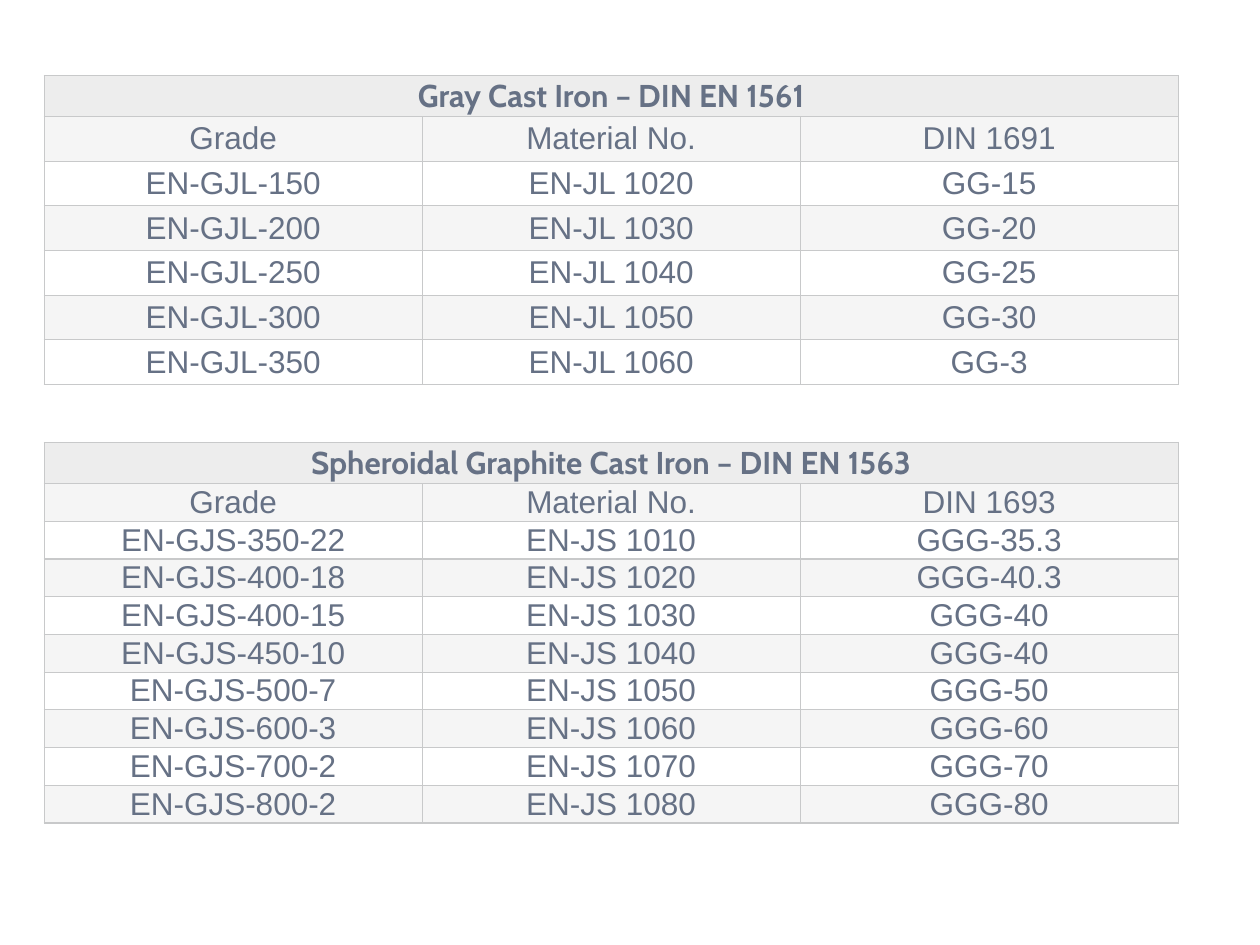
import pptx
import pptx.dml.color
import pptx.enum.text
import pptx.oxml
import pptx.oxml.ns
import pptx.util
from pptx.util import Cm

TEXT_COLOR = "667185"
BORDER_COLOR = "C8C9CA"
TITLE_FILL = "EDEDED"
BAND_FILLS = ("F5F5F5", "FFFFFF")
TITLE_HEIGHT = Cm(0.83)
CELL_MARGIN = Cm(0.02)

GRAY_IRON = [
    ("Grade", "Material No.", "DIN 1691"),
    ("EN-GJL-150", "EN-JL 1020", "GG-15"),
    ("EN-GJL-200", "EN-JL 1030", "GG-20"),
    ("EN-GJL-250", "EN-JL 1040", "GG-25"),
    ("EN-GJL-300", "EN-JL 1050", "GG-30"),
    ("EN-GJL-350", "EN-JL 1060", "GG-3"),
]
SPHEROIDAL_IRON = [
    ("Grade", "Material No.", "DIN 1693"),
    ("EN-GJS-350-22", "EN-JS 1010", "GGG-35.3"),
    ("EN-GJS-400-18", "EN-JS 1020", "GGG-40.3"),
    ("EN-GJS-400-15", "EN-JS 1030", "GGG-40"),
    ("EN-GJS-450-10", "EN-JS 1040", "GGG-40"),
    ("EN-GJS-500-7", "EN-JS 1050", "GGG-50"),
    ("EN-GJS-600-3", "EN-JS 1060", "GGG-60"),
    ("EN-GJS-700-2", "EN-JS 1070", "GGG-70"),
    ("EN-GJS-800-2", "EN-JS 1080", "GGG-80"),
]


def set_fill(target, color):
    target.fill.solid()
    target.fill.fore_color.rgb = pptx.dml.color.RGBColor.from_string(color)


def write_text(cell, text, font="Arial", size=18, bold=False, color=TEXT_COLOR):
    cell.vertical_anchor = pptx.enum.text.MSO_ANCHOR.MIDDLE
    cell.margin_left = cell.margin_right = CELL_MARGIN
    cell.margin_top = cell.margin_bottom = CELL_MARGIN
    paragraph = cell.text_frame.paragraphs[0]
    paragraph.alignment = pptx.enum.text.PP_ALIGN.CENTER
    run = paragraph.add_run()
    run.text = text
    run.font.name = font
    run.font.size = pptx.util.Pt(size)
    run.font.bold = bold
    set_fill(run.font, color)


def set_borders(cell, color=BORDER_COLOR, width=0.75):
    properties = cell._tc.get_or_add_tcPr()
    for position, side in enumerate(("lnL", "lnR", "lnT", "lnB")):
        # Border lines must come before the cell fill
        properties.insert(position, pptx.oxml.parse_xml(
            f'<a:{side} {pptx.oxml.ns.nsdecls("a")} w="{pptx.util.Pt(width)}">'
            f'<a:solidFill><a:srgbClr val="{color}"/></a:solidFill></a:{side}>'))


def add_grade_table(slide, left, top, width, row_height, title, rows):
    column_count = len(rows[0])
    height = TITLE_HEIGHT + row_height * len(rows)
    table = slide.shapes.add_table(
        len(rows) + 1, column_count, left, top, width, height).table
    for column in table.columns:
        column.width = width // column_count
    for row in table.rows:
        row.height = row_height
    table.rows[0].height = TITLE_HEIGHT

    # Title across all columns
    title_cell = table.cell(0, 0)
    title_cell.merge(table.cell(0, column_count - 1))
    write_text(title_cell, title, font="Cabin", bold=True)
    for column_index in range(column_count):
        set_fill(table.cell(0, column_index), TITLE_FILL)

    # Column heads and grades in alternating bands
    for row_index, values in enumerate(rows):
        for column_index, value in enumerate(values):
            cell = table.cell(row_index + 1, column_index)
            write_text(cell, value)
            set_fill(cell, BAND_FILLS[row_index % 2])

    for cell in table.iter_cells():
        set_borders(cell)


def main():
    presentation = pptx.Presentation()
    presentation.slide_width = Cm(25.4)
    presentation.slide_height = Cm(19.05)
    slide = presentation.slides.add_slide(presentation.slide_layouts[6])
    set_fill(slide.background, "FFFFFF")

    left, width = Cm(0.89), Cm(22.86)
    add_grade_table(slide, left, Cm(1.52), width, Cm(0.9),
                    "Gray Cast Iron – DIN EN 1561", GRAY_IRON)
    add_grade_table(slide, left, Cm(8.92), width, Cm(0.76),
                    "Spheroidal Graphite Cast Iron – DIN EN 1563", SPHEROIDAL_IRON)
    presentation.save("out.pptx")


if __name__ == "__main__":
    main()
